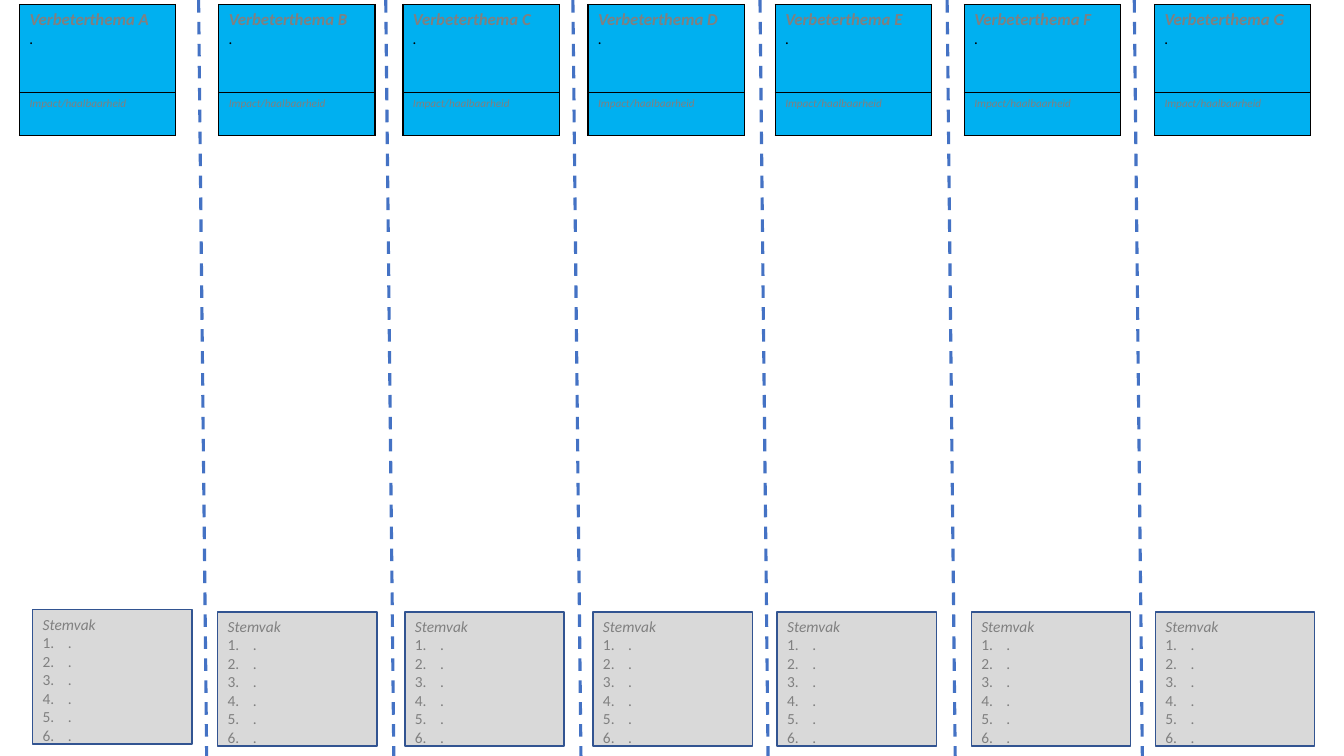
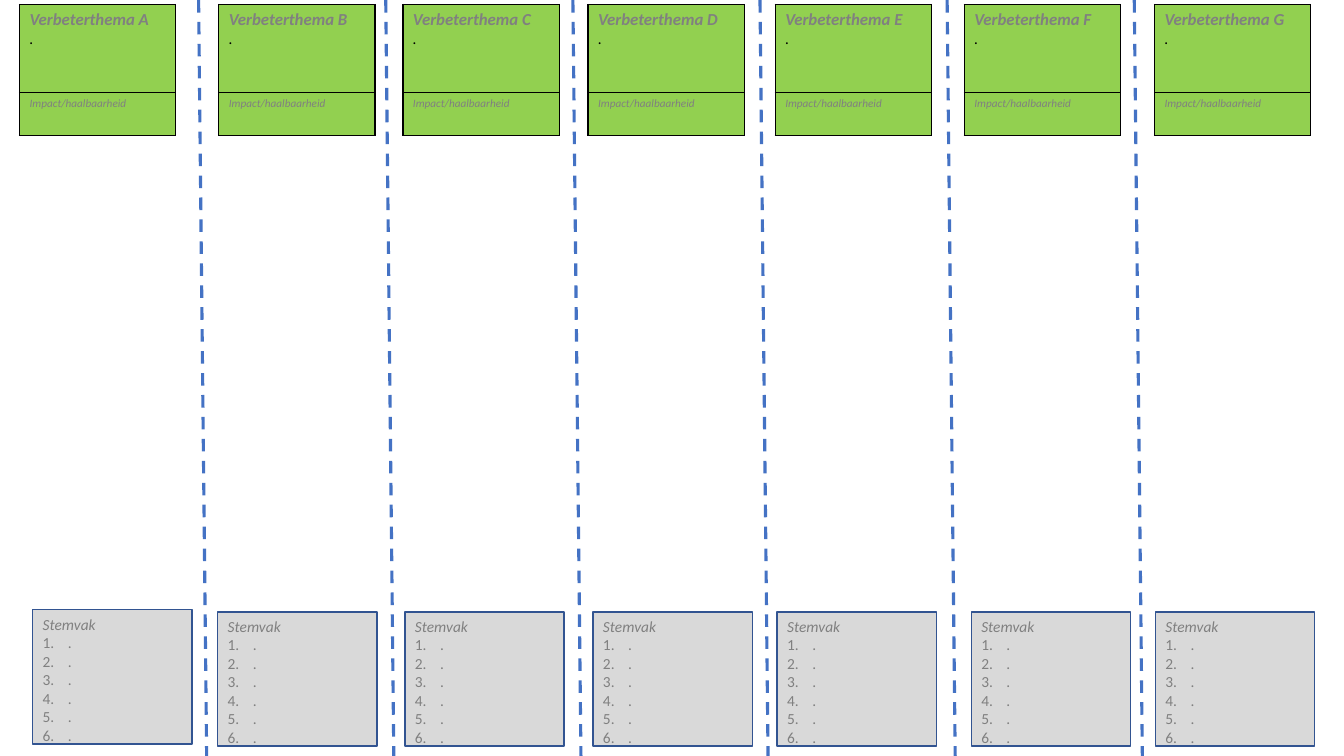
from dataclasses import dataclass

from lxml import etree
from pptx import Presentation
from pptx.dml.color import RGBColor
from pptx.enum.dml import MSO_LINE
from pptx.enum.shapes import MSO_CONNECTOR, MSO_SHAPE
from pptx.enum.text import MSO_ANCHOR, PP_ALIGN
from pptx.oxml.ns import qn
from pptx.util import Inches, Pt

DASH = MSO_LINE.DASH
STRAIGHT = MSO_CONNECTOR.STRAIGHT
RECTANGLE = MSO_SHAPE.RECTANGLE
TOP = MSO_ANCHOR.TOP
LEFT = PP_ALIGN.LEFT

SLIDE_WIDTH, SLIDE_HEIGHT = 13.33, 7.5
GRID_ROWS = 75
FIRST_SEPARATOR, LAST_SEPARATOR = 1.97, 11.25
SEPARATOR_DRIFT = 0.08
CARD_WIDTH, VOTE_WIDTH = 1.55, 1.58
VOTE_CHOICES = 6

# letter, card inset in its lane, vote box inset in its lane, vote box row
LANES = [
    ("A", 0.08, 0.21, 60.5),
    ("B", 0.20, 0.19, 60.7),
    ("C", 0.17, 0.19, 60.7),
    ("D", 0.15, 0.20, 60.7),
    ("E", 0.15, 0.17, 60.7),
    ("F", 0.17, 0.24, 60.7),
    ("G", 0.20, 0.21, 60.7),
]
LANE_PITCH = (LAST_SEPARATOR - FIRST_SEPARATOR) / (len(LANES) - 2)


@dataclass(frozen=True)
class Theme:
    font: str = "Calibri"
    blue: str = "00B0F0"
    green: str = "92D050"
    separator: str = "4472C4"
    vote_fill: str = "D9D9D9"
    vote_border: str = "325491"
    muted: str = "808080"
    ink: str = "000000"
    heading_size: int = 12
    body_size: int = 11
    caption_size: int = 8
    border_width: int = 1
    separator_width: float = 2.25


def lane_x(lane, inset=0):
    return Inches(FIRST_SEPARATOR + (lane - 1) * LANE_PITCH + inset)


def rows(count):
    return Inches(SLIDE_HEIGHT / GRID_ROWS * count)


class Board:
    def __init__(self, presentation, theme):
        self.presentation = presentation
        self.theme = theme
        self.slide = None

    def add_slide(self):
        blank = self.presentation.slide_layouts[6]
        self.slide = self.presentation.slides.add_slide(blank)

    def add_text(self, paragraph, text, size, color, **formats):
        paragraph.alignment = LEFT
        run = paragraph.add_run()
        run.text = text
        values = {"name": self.theme.font, "size": Pt(size), **formats}
        for name, value in values.items():
            setattr(run.font, name, value)
        run.font.color.rgb = RGBColor.from_string(color)

    def number(self, paragraph):
        properties = paragraph._p.get_or_add_pPr()
        properties.set("marL", str(Inches(0.25)))
        properties.set("indent", str(-Inches(0.25)))
        etree.SubElement(properties, qn("a:buAutoNum"), type="arabicPeriod")

    def separator(self, lane):
        connector = self.slide.shapes.add_connector(
            STRAIGHT, lane_x(lane), 0,
            lane_x(lane, SEPARATOR_DRIFT), rows(GRID_ROWS))
        connector.line.color.rgb = RGBColor.from_string(self.theme.separator)
        connector.line.width = Pt(self.theme.separator_width)
        connector.line.dash_style = DASH
        etree.SubElement(connector._element.spPr, qn("a:effectLst"))

    def vote_box(self, lane, inset, top):
        theme = self.theme
        shape = self.slide.shapes.add_shape(
            RECTANGLE, lane_x(lane, inset), rows(top),
            Inches(VOTE_WIDTH), rows(13.3))
        shape.shadow.inherit = False
        shape.fill.solid()
        shape.fill.fore_color.rgb = RGBColor.from_string(theme.vote_fill)
        shape.line.color.rgb = RGBColor.from_string(theme.vote_border)
        shape.line.width = Pt(theme.border_width)
        frame = shape.text_frame
        frame.word_wrap = True
        frame.vertical_anchor = TOP
        self.add_text(frame.paragraphs[0], "Stemvak", theme.body_size,
                      theme.muted, italic=True)
        for _ in range(VOTE_CHOICES):
            paragraph = frame.add_paragraph()
            self.add_text(paragraph, ".", theme.body_size, theme.muted)
            self.number(paragraph)

    def theme_card(self, lane, inset, letter, fill):
        theme = self.theme
        heights = [rows(8.7), rows(4.3)]
        table = self.slide.shapes.add_table(
            2, 1, lane_x(lane, inset), rows(0.45),
            Inches(CARD_WIDTH), sum(heights)).table
        table.first_row = table.horz_banding = False
        for row, height in zip(table.rows, heights):
            row.height = height
            self.style_cell(row.cells[0], fill)
        heading = table.cell(0, 0).text_frame
        self.add_text(heading.paragraphs[0], f"Verbeterthema {letter}",
                      theme.heading_size, theme.muted, bold=True, italic=True)
        self.add_text(heading.add_paragraph(), ".", theme.body_size, theme.ink,
                      bold=False, italic=True)
        caption = table.cell(1, 0).text_frame
        self.add_text(caption.paragraphs[0], "Impact/haalbaarheid",
                      theme.caption_size, theme.muted, bold=False, italic=True)

    def style_cell(self, cell, fill):
        properties = cell._tc.get_or_add_tcPr()
        for side in ("lnL", "lnR", "lnT", "lnB"):
            border = etree.SubElement(properties, qn(f"a:{side}"),
                                      w=str(Pt(self.theme.border_width)))
            solid = etree.SubElement(border, qn("a:solidFill"))
            etree.SubElement(solid, qn("a:srgbClr"), val=self.theme.ink)
        cell.fill.solid()
        cell.fill.fore_color.rgb = RGBColor.from_string(fill)


def main():
    presentation = Presentation()
    presentation.slide_width = Inches(SLIDE_WIDTH)
    presentation.slide_height = Inches(SLIDE_HEIGHT)
    theme = Theme()
    board = Board(presentation, theme)
    for card_fill in (theme.blue, theme.green):
        board.add_slide()
        for lane, (letter, card_inset, vote_inset, vote_row) in enumerate(LANES):
            if lane > 0:
                board.separator(lane)
            board.vote_box(lane, vote_inset, vote_row)
            board.theme_card(lane, card_inset, letter, card_fill)
    presentation.save("out.pptx")


if __name__ == "__main__":
    main()
